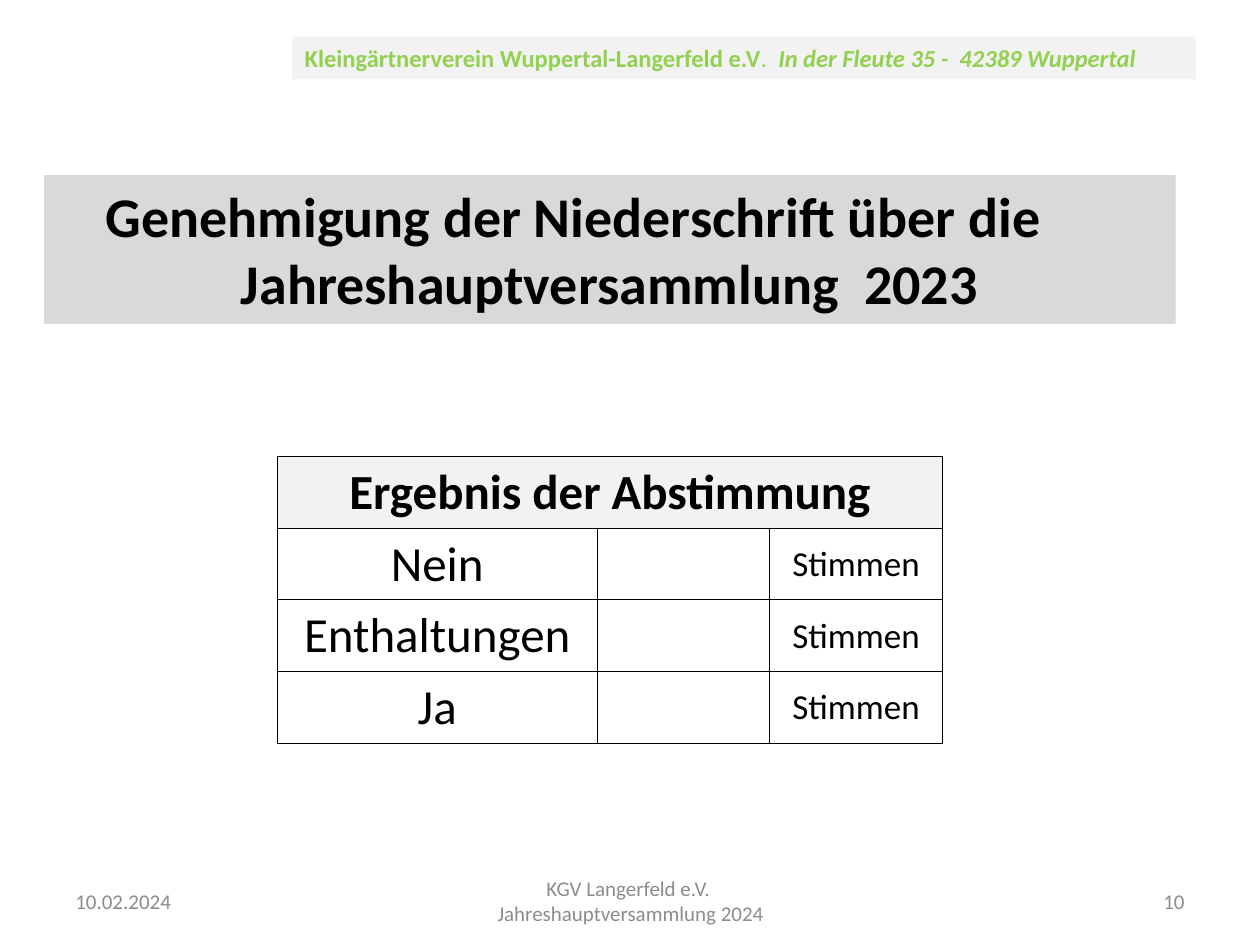
import pptx
import pptx.dml.color
import pptx.enum.shapes
import pptx.enum.text
import pptx.oxml
import pptx.oxml.ns
import pptx.util

Inches = pptx.util.Inches
Pt = pptx.util.Pt
RGBColor = pptx.dml.color.RGBColor
ALIGN = pptx.enum.text.PP_ALIGN
ANCHOR = pptx.enum.text.MSO_ANCHOR

BLACK = RGBColor(0x00, 0x00, 0x00)
GREEN = RGBColor(0x92, 0xD0, 0x50)
FOOTER_GRAY = RGBColor(0x8C, 0x8C, 0x8C)
LIGHT_GRAY = RGBColor(0xF2, 0xF2, 0xF2)
TITLE_GRAY = RGBColor(0xD9, 0xD9, 0xD9)


def format_paragraph(para, size, color, align, bold=False):
    para.alignment = align
    for span in para.runs:
        span.font.name = "Calibri"
        span.font.size = Pt(size)
        span.font.bold = bold
        span.font.color.rgb = color


def add_borders(cell):
    properties = cell._tc.get_or_add_tcPr()
    for side in ("lnL", "lnR", "lnT", "lnB"):
        properties.append(pptx.oxml.parse_xml(
            f'<a:{side} {pptx.oxml.ns.nsdecls("a")} w="{Pt(0.5)}">'
            f'<a:solidFill><a:srgbClr val="{BLACK}"/></a:solidFill></a:{side}>'))


deck = pptx.Presentation()
deck.slide_width = Inches(10)
deck.slide_height = Inches(7.5)
page = deck.slides.add_slide(deck.slide_layouts[5])

banner = page.shapes.add_shape(
    pptx.enum.shapes.MSO_SHAPE.RECTANGLE,
    Inches(2.32), Inches(0.29), Inches(7.17), Inches(0.34))
banner.shadow.inherit = False
banner.fill.solid()
banner.fill.fore_color.rgb = LIGHT_GRAY
banner.line.fill.background()
banner.text_frame.word_wrap = True
banner.text_frame.vertical_anchor = ANCHOR.TOP
para = banner.text_frame.paragraphs[0]
for text in ("Kleingärtnerverein Wuppertal-Langerfeld e.V", ".  ",
             "In der Fleute 35 -  42389 Wuppertal"):
    para.add_run().text = text
format_paragraph(para, 14, GREEN, ALIGN.LEFT, bold=True)
para.runs[1].font.bold = False
para.runs[2].font.italic = True

title = page.shapes.title
title.left, title.top = Inches(0.35), Inches(1.39)
title.width, title.height = Inches(8.98), Inches(1.18)
title.fill.solid()
title.fill.fore_color.rgb = TITLE_GRAY
title.text_frame.text = "Genehmigung der Niederschrift über die \tJahreshauptversammlung  2023"
title.text_frame.word_wrap = True
title.text_frame.auto_size = pptx.enum.text.MSO_AUTO_SIZE.NONE
title.text_frame.vertical_anchor = ANCHOR.TOP
format_paragraph(title.text_frame.paragraphs[0], 32, BLACK, ALIGN.CENTER, bold=True)

votes = [
    ("Ergebnis der Abstimmung", "", ""),
    ("Nein", "", "Stimmen"),
    ("Enthaltungen", "", "Stimmen"),
    ("Ja", "", "Stimmen"),
]
table = page.shapes.add_table(
    len(votes), 3, Inches(2.2), Inches(3.62), Inches(5.28), Inches(2.28)).table
table.first_row = False
table.horz_banding = False
for column, width in zip(table.columns, (2.54, 1.37, 1.37)):
    column.width = Inches(width)
for row_index, row in enumerate(votes):
    is_heading = row_index == 0
    table.rows[row_index].height = Inches(0.57)
    for column_index, text in enumerate(row):
        cell = table.cell(row_index, column_index)
        cell.margin_left = cell.margin_right = cell.margin_top = Inches(0.01)
        cell.margin_bottom = 0
        cell.vertical_anchor = ANCHOR.MIDDLE
        add_borders(cell)
        if is_heading:
            cell.fill.solid()
            cell.fill.fore_color.rgb = LIGHT_GRAY
        else:
            cell.fill.background()
        if text:
            cell.text_frame.text = text
            format_paragraph(cell.text_frame.paragraphs[0], 20 if column_index == 2 else 28,
                             BLACK, ALIGN.CENTER, bold=is_heading)
table.cell(0, 0).merge(table.cell(0, 2))

footers = [
    ("10.02.2024", 0.5, 2.33, ALIGN.LEFT),
    ("KGV Langerfeld e.V.  Jahreshauptversammlung 2024", 3.42, 3.17, ALIGN.CENTER),
    ("10", 7.17, 2.33, ALIGN.RIGHT),
]
for text, left, width, align in footers:
    box = page.shapes.add_textbox(Inches(left), Inches(6.95), Inches(width), Inches(0.4))
    box.text_frame.word_wrap = True
    box.text_frame.vertical_anchor = ANCHOR.MIDDLE
    box.text_frame.text = text
    format_paragraph(box.text_frame.paragraphs[0], 12, FOOTER_GRAY, align)

deck.save("out.pptx")
